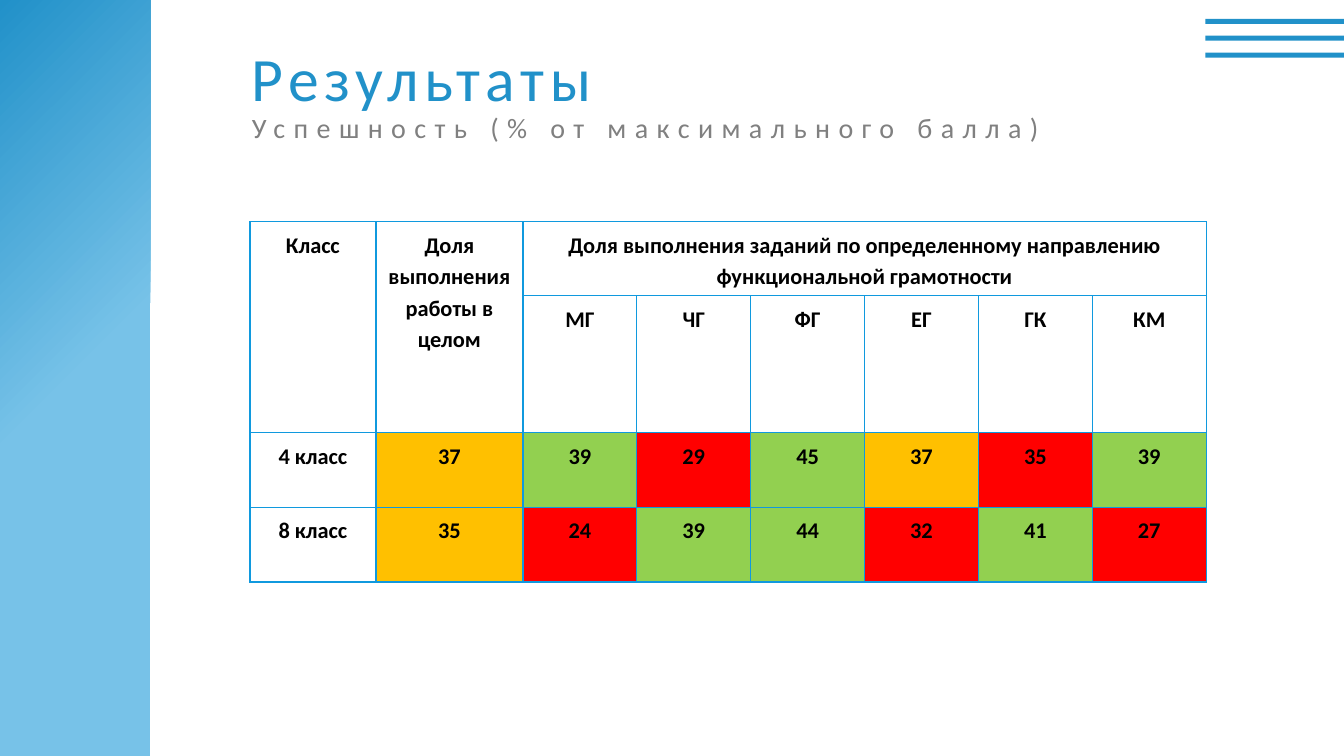
from lxml import etree
from pptx import Presentation
from pptx import util as u
from pptx.dml.color import RGBColor
from pptx.enum import shapes, text
from pptx.oxml import parse_xml
from pptx.oxml.ns import nsdecls, qn

COLUMNS, ROWS = 160, 90
LEVELS = {"H": "92D050", "M": "FFC000", "L": "FF0000"}
DIRECTIONS = ["МГ", "ЧГ", "ФГ", "ЕГ", "ГК", "КМ"]
RESULTS = [
    ("4 класс", [37, 39, 29, 45, 37, 35, 39], "MHLHMLH"),
    ("8 класс", [35, 24, 39, 44, 32, 41, 27], "MLHHLHL"),
]


def color(value):
    return RGBColor.from_string(value)


def apply(target, values):
    for name, value in values.items():
        setattr(target, name, value)


class SlideBuilder:
    font = "Calibri"
    accent = "2191C9"
    light = "77C2E8"
    muted = "808080"
    ink = "000000"
    border = "1099DE"

    def __init__(self, presentation):
        self.column = presentation.slide_width / COLUMNS
        self.row = presentation.slide_height / ROWS
        self.slide = presentation.slides.add_slide(presentation.slide_layouts[6])

    def box(self, left, top, width, height):
        return (round(left * self.column), round(top * self.row),
                round(width * self.column), round(height * self.row))

    def bar(self, *place):
        shape = self.slide.shapes.add_shape(shapes.MSO_SHAPE.RECTANGLE, *self.box(*place))
        shape.shadow.inherit = False
        shape.fill.solid()
        shape.fill.fore_color.rgb = color(self.accent)
        shape.line.fill.background()
        return shape

    def gradient_bar(self, *place):
        properties = self.bar(*place)._element.spPr
        stops = "".join(
            f'<a:gs pos="{position}000"><a:srgbClr val="{value}"/></a:gs>'
            for position, value in [(0, self.accent), (50, self.light), (100, self.light)])
        gradient = parse_xml(
            f'<a:gradFill {nsdecls("a")} rotWithShape="1"><a:gsLst>{stops}</a:gsLst>'
            '<a:path path="circle"><a:fillToRect r="100000" b="100000"/></a:path></a:gradFill>')
        properties.replace(properties.find(qn("a:solidFill")), gradient)

    def add_words(self, paragraph, words, fill, paragraph_format, font_format, spacing=0):
        apply(paragraph, paragraph_format)
        run = paragraph.add_run()
        run.text = words
        apply(run.font, {"name": self.font, **font_format})
        run.font.color.rgb = color(fill)
        if spacing:
            run._r.get_or_add_rPr().set("spc", str(spacing * 100))

    def label(self, place, words, size, fill, spacing, anchor):
        frame = self.slide.shapes.add_textbox(*self.box(*place)).text_frame
        apply(frame, {"word_wrap": True, "vertical_anchor": anchor})
        self.add_words(frame.paragraphs[0], words, fill, {"line_spacing": 0.9},
                       {"size": u.Pt(size)}, spacing)

    def table(self, left, top, widths, heights):
        place = self.box(left, top, sum(widths), sum(heights))
        table = self.slide.shapes.add_table(len(heights), len(widths), *place).table
        apply(table, {"first_row": False, "horz_banding": False})
        for column, width in zip(table.columns, widths):
            column.width = round(width * self.column)
        for row, height in zip(table.rows, heights):
            row.height = round(height * self.row)
        for cell in table.iter_cells():
            cell.fill.background()
            self.outline(cell)
        return table

    def outline(self, cell):
        properties = cell._tc.get_or_add_tcPr()
        for index, side in enumerate(["lnL", "lnR", "lnT", "lnB"]):
            line = etree.Element(qn(f"a:{side}"), w=str(u.Pt(1)))
            fill = etree.SubElement(line, qn("a:solidFill"))
            etree.SubElement(fill, qn("a:srgbClr"), val=self.border)
            properties.insert(index, line)

    def cell(self, cell, words, fill=None):
        apply(cell, {"margin_left": u.Inches(0.1), "margin_right": u.Inches(0.1),
                     "margin_top": u.Inches(0.06), "margin_bottom": u.Inches(0.06)})
        if fill:
            cell.fill.solid()
            cell.fill.fore_color.rgb = color(fill)
        self.add_words(cell.text_frame.paragraphs[0], words, self.ink,
                       {"alignment": text.PP_ALIGN.CENTER, "line_spacing": 1.15},
                       {"size": u.Pt(16), "bold": True})


def main():
    presentation = Presentation()
    apply(presentation, {"slide_width": u.Inches(13.33), "slide_height": u.Inches(7.5)})
    builder = SlideBuilder(presentation)

    for index in range(3):
        builder.bar(143.5, 2.25 + 2 * index, 16.5, 0.6)
    builder.gradient_bar(0, 0, 17.9, ROWS)

    builder.label((28.8, 4, 114.7, 10.2), "Результаты", 44, builder.accent, 4,
                  text.MSO_ANCHOR.BOTTOM)
    builder.label((28.8, 13, 114.7, 5.6), "Успешность (% от максимального балла)", 20,
                  builder.muted, 6, text.MSO_ANCHOR.TOP)

    table = builder.table(29.75, 26.4, [15, 17.5] + [13.56] * len(DIRECTIONS),
                          [8.8, 16.3] + [8.9] * len(RESULTS))
    headings = [
        ("Класс", 0, 1, 0),
        ("Доля выполнения работы в целом", 1, 1, 1),
        ("Доля выполнения заданий по определенному направлению функциональной грамотности",
         2, 0, 7),
    ]
    for words, first_column, last_row, last_column in headings:
        heading = table.cell(0, first_column)
        heading.merge(table.cell(last_row, last_column))
        builder.cell(heading, words)
    for index, direction in enumerate(DIRECTIONS, 2):
        builder.cell(table.cell(1, index), direction)
    for row, (grade, scores, levels) in enumerate(RESULTS, 2):
        builder.cell(table.cell(row, 0), grade)
        for column, (score, level) in enumerate(zip(scores, levels), 1):
            builder.cell(table.cell(row, column), str(score), LEVELS[level])

    presentation.save("out.pptx")


if __name__ == "__main__":
    main()
